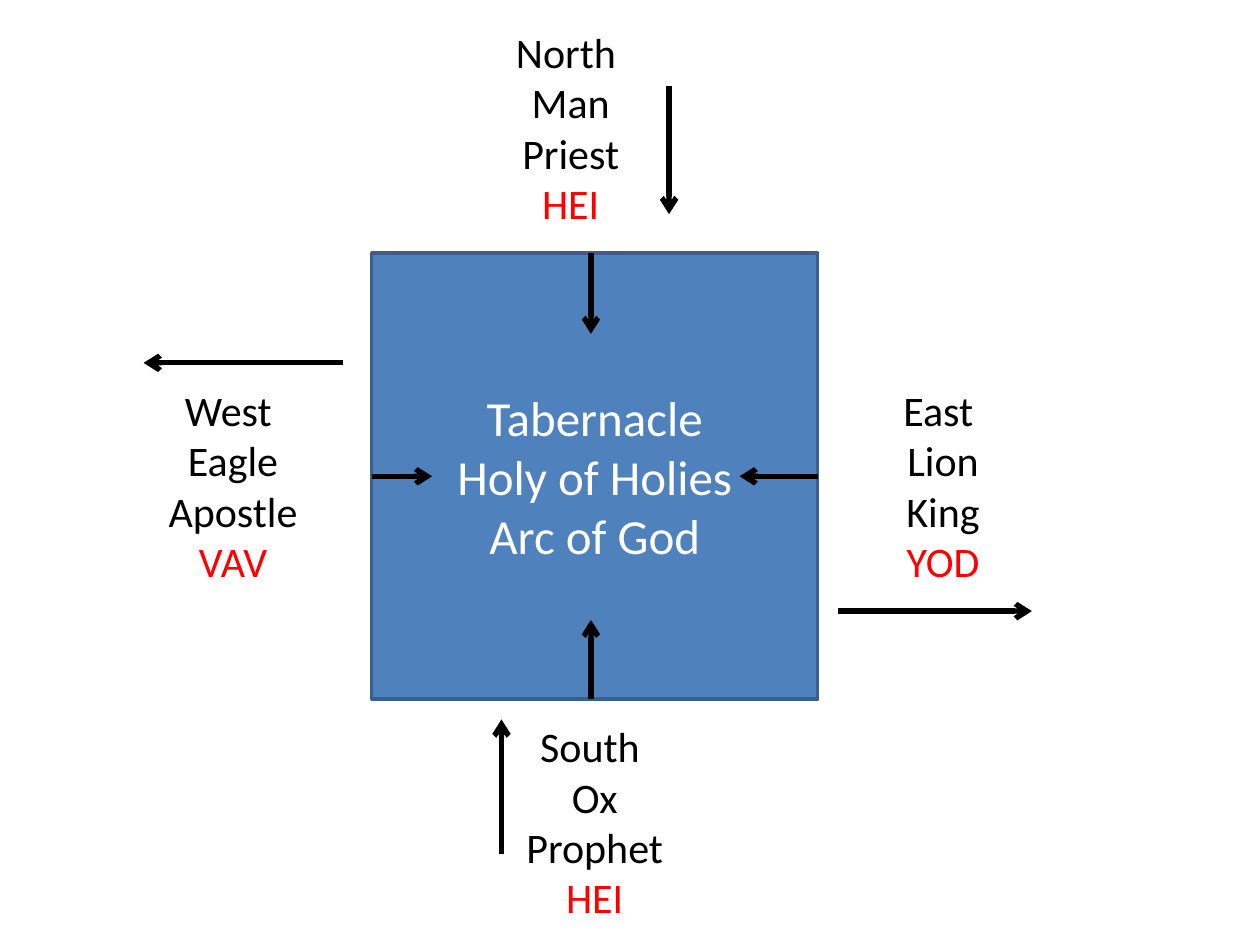
from pptx import Presentation
from pptx import util as u
from pptx.dml.color import RGBColor
from pptx.enum import shapes, text
from pptx.oxml.ns import qn
from lxml import etree

COLORS = {"square": "4F81BD", "border": "3A5F8C", "white": "FFFFFF",
          "black": "000000", "letter": "FF0000"}
FONT = "Calibri"

# Sides of the tabernacle square, in inches
LEFT, TOP, SIZE = 2.95, 2.01, 3.54
RIGHT, BOTTOM = LEFT + SIZE, TOP + SIZE
MID_X, MID_Y = 4.69, TOP + SIZE / 2

# Direction, creature, office and letter, with left, top, width, height
CAMPS = [
    (["North ", "Man", "Priest", "HEI"], (3.98, 0.21, 1.1, 1.57)),
    (["South ", "Ox", "Prophet", "HEI"], (4.13, 5.72, 1.18, 1.57)),
    (["East ", "Lion", "King", "YOD"], (7.05, 3.05, 0.87, 1.57)),
    (["West ", "Eagle", "Apostle", "VAV"], (1.3, 3.05, 1.1, 1.57)),
]

# Start and end points
OUTER_ARROWS = [
    ((5.31, 0.68), (5.31, 1.7)),
    ((3.98, 6.78), (3.98, 5.71)),
    ((6.65, 4.85), (8.19, 4.85)),
    ((2.72, 2.88), (1.14, 2.88)),
]
INNER_ARROWS = [
    ((MID_X, TOP), (MID_X, TOP + 0.64)),
    ((LEFT, MID_Y), (LEFT + 0.48, MID_Y)),
    ((RIGHT, MID_Y), (RIGHT - 0.62, MID_Y)),
    ((MID_X, BOTTOM), (MID_X, BOTTOM - 0.63)),
]


def rgb(name):
    return RGBColor.from_string(COLORS[name])


def write_lines(frame, lines, size, colors):
    """Fill a frame with one centred paragraph per line."""
    frame.text = "\n".join(lines)
    for paragraph, color in zip(frame.paragraphs, colors):
        paragraph.alignment = text.PP_ALIGN.CENTER
        font = paragraph.runs[0].font
        font.name, font.size = FONT, u.Pt(size)
        font.color.rgb = rgb(color)


def add_tabernacle(slide):
    square = slide.shapes.add_shape(
        shapes.MSO_SHAPE.RECTANGLE,
        *map(u.Inches, (LEFT, TOP, SIZE, SIZE)))
    square.shadow.inherit = False
    square.fill.solid()
    square.fill.fore_color.rgb = rgb("square")
    square.line.color.rgb = rgb("border")
    square.line.width = u.Pt(2)
    square.text_frame.vertical_anchor = text.MSO_ANCHOR.MIDDLE
    write_lines(square.text_frame,
                ["Tabernacle", "Holy of Holies", "Arc of God"],
                28, ["white"] * 3)


def add_camp(slide, lines, box):
    frame = slide.shapes.add_textbox(*map(u.Inches, box)).text_frame
    frame.word_wrap = True
    frame.margin_left = frame.margin_right = 0
    frame.margin_top = frame.margin_bottom = 0
    write_lines(frame, lines, 24, ["black"] * 3 + ["letter"])


def add_arrow(slide, start, end):
    arrow = slide.shapes.add_connector(
        shapes.MSO_CONNECTOR.STRAIGHT, *map(u.Inches, start + end))
    arrow.line.color.rgb = rgb("black")
    arrow.line.width = u.Pt(3)
    # Arrowhead at the end, and no theme shadow
    etree.SubElement(arrow.line._get_or_add_ln(), qn("a:tailEnd"), type="arrow")
    etree.SubElement(arrow._element.spPr, qn("a:effectLst"))


def main():
    deck = Presentation()
    deck.slide_width, deck.slide_height = u.Inches(10), u.Inches(7.5)
    slide = deck.slides.add_slide(deck.slide_layouts[6])

    # Centre and the four camps around it
    add_tabernacle(slide)
    for lines, box in CAMPS:
        add_camp(slide, lines, box)

    # Arrows beside the camps and inside the square
    for start, end in OUTER_ARROWS + INNER_ARROWS:
        add_arrow(slide, start, end)

    deck.save("out.pptx")


if __name__ == "__main__":
    main()
